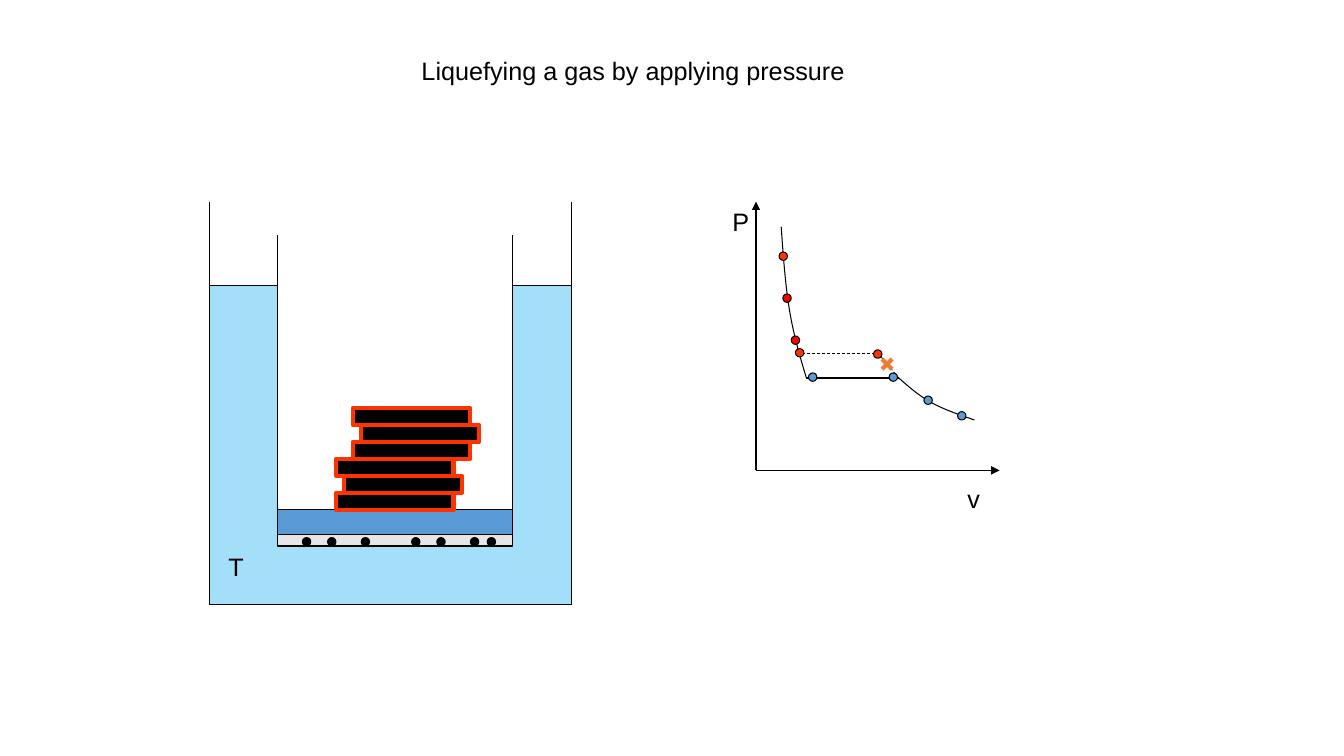
from lxml import etree
from pptx import Presentation
from pptx.dml.color import RGBColor
from pptx.enum.dml import MSO_LINE
from pptx.enum.shapes import MSO_CONNECTOR, MSO_SHAPE
from pptx.oxml.ns import qn
from pptx.util import Emu, Inches, Pt

RECTANGLE, OVAL = MSO_SHAPE.RECTANGLE, MSO_SHAPE.OVAL
STRAIGHT, DASH = MSO_CONNECTOR.STRAIGHT, MSO_LINE.DASH

COLORS = {
    "ink": "000000",
    "gas": "E7E6E6",
    "bath": "A4DFFA",
    "blue": "5B9BD5",
    "red": "FF0000",
    "flame": "FF3300",
    "cross": "ED7D31",
}
COLUMNS, ROWS = 160, 90
CURVE_STEPS = 12


def bezier(start, control_1, control_2, end):
    for step in range(1, CURVE_STEPS + 1):
        t = step / CURVE_STEPS
        u = 1 - t
        yield tuple(
            u**3 * a + 3 * u * u * t * b + 3 * u * t * t * c + t**3 * d
            for a, b, c, d in zip(start, control_1, control_2, end)
        )


def curve(*points):
    path = [points[0]]
    for first in range(0, len(points) - 1, 3):
        path.extend(bezier(*points[first:first + 4]))
    return path


class Diagram:
    font = "Arial"
    thin = 0.75

    def __init__(self, deck):
        self.cell = deck.slide_width / COLUMNS
        self.slide = deck.slides.add_slide(deck.slide_layouts[6])
        self.shapes = self.slide.shapes

    def grid(self, *cells):
        return [Emu(round(cell * self.cell)) for cell in cells]

    def paint(self, shape, fill, line, width):
        shape.shadow.inherit = False
        if fill:
            shape.fill.solid()
            shape.fill.fore_color.rgb = RGBColor.from_string(COLORS[fill])
        else:
            shape.fill.background()
        self.stroke(shape.line, line, width)

    def stroke(self, outline, color, width):
        outline.color.rgb = RGBColor.from_string(COLORS[color])
        outline.width = Pt(width)

    def block(self, column, row, columns, rows, fill, line="ink", width=thin, kind=RECTANGLE):
        shape = self.shapes.add_shape(kind, *self.grid(column, row, columns, rows))
        self.paint(shape, fill, line, width)

    def dot(self, column, row, fill):
        self.block(column, row, 1, 1, fill, kind=OVAL)

    def outline(self, points, fill=None, close=False):
        start, *rest = [self.grid(*point) for point in points]
        builder = self.shapes.build_freeform(*start)
        builder.add_line_segments(rest, close=close)
        self.paint(builder.convert_to_shape(), fill, "ink", self.thin)

    def line(self, start, end, color="ink", width=thin, dash=None, arrow=False):
        connector = self.shapes.add_connector(STRAIGHT, *self.grid(*start, *end))
        self.stroke(connector.line, color, width)
        if dash:
            connector.line.dash_style = dash
        if arrow:
            outline = connector.line._get_or_add_ln()
            etree.SubElement(outline, qn("a:tailEnd"), type="triangle")
        etree.SubElement(connector._element.spPr, qn("a:effectLst"))

    def text(self, words, column, row, columns, size=18, color="ink"):
        box = self.shapes.add_textbox(*self.grid(column, row, columns, 4.8))
        box.text_frame.word_wrap = True
        run = box.text_frame.paragraphs[0].add_run()
        run.text = words
        run.font.name = self.font
        run.font.size = Pt(size)
        run.font.color.rgb = RGBColor.from_string(COLORS[color])


def draw_cylinder(diagram):
    diagram.block(33, 63, 28, 2, "gas", "gas")
    bath = [(25, 34), (33, 34), (33, 65), (61, 65), (61, 34), (68, 34), (68, 72), (25, 72)]
    for left, right, top, bottom in ((33, 61, 28, 65), (25, 68, 24, 72)):
        diagram.line((left, top), (left, bottom))
        diagram.line((left, bottom), (right, bottom))
        diagram.line((right, top), (right, bottom))
    diagram.outline(bath, fill="bath", close=True)
    diagram.block(33, 60.6, 28, 3, "blue")
    thickness = 2.02
    for level, column in enumerate((40, 41, 40, 42, 43, 42)):
        diagram.block(column, 58.68 - level * thickness, 14, thickness, "ink", "flame", 3)
    for column in (36, 39, 43, 49, 52, 56, 58):
        diagram.dot(column, 64, "ink")
    diagram.text("T", 26, 65, 7)


def draw_isotherm(diagram):
    origin, liquid, vapor = (90, 56), (96, 45), (107, 45)
    diagram.line(origin, (90, 24), arrow=True)
    diagram.line(origin, (119, 56), arrow=True)
    diagram.outline(curve((93, 27), (93.25, 30.5), (93.5, 34), (94, 37),
                          (94.5, 40), (95.25, 42.5), liquid))
    diagram.line(liquid, vapor)
    diagram.outline(curve(vapor, (108.25, 46.1), (109.5, 47.2), (111, 48),
                          (112.5, 48.8), (114.25, 49.4), (116, 50)))
    diagram.text("P", 86, 24, 5)
    diagram.text("v", 114, 57, 5)

    states = {
        "blue": [(114, 49), (110, 47.15), (105.85, 44.4), (96.25, 44.4)],
        "red": [(94.2, 40), (93.2, 35)],
        "flame": [(92.75, 30), (94.7, 41.5), (104, 41.65)],
    }
    diagram.line((104.75, 42.1), (94.7, 42.1), width=0.5, dash=DASH)
    diagram.line(vapor, (104.5, 42), width=0.5, dash=DASH)
    for color, places in states.items():
        for column, row in places:
            diagram.dot(column, row, color)
    left, right, top, bottom = 105, 106.2, 42.75, 43.95
    diagram.line((left, top), (right, bottom), "cross", 3)
    diagram.line((left, bottom), (right, top), "cross", 3)


def main():
    deck = Presentation()
    deck.slide_width = Inches(COLUMNS / 12)
    deck.slide_height = Inches(ROWS / 12)
    diagram = Diagram(deck)
    diagram.text("Liquefying a gas by applying pressure", 49, 6, 61)
    draw_cylinder(diagram)
    draw_isotherm(diagram)
    deck.save("out.pptx")


if __name__ == "__main__":
    main()
